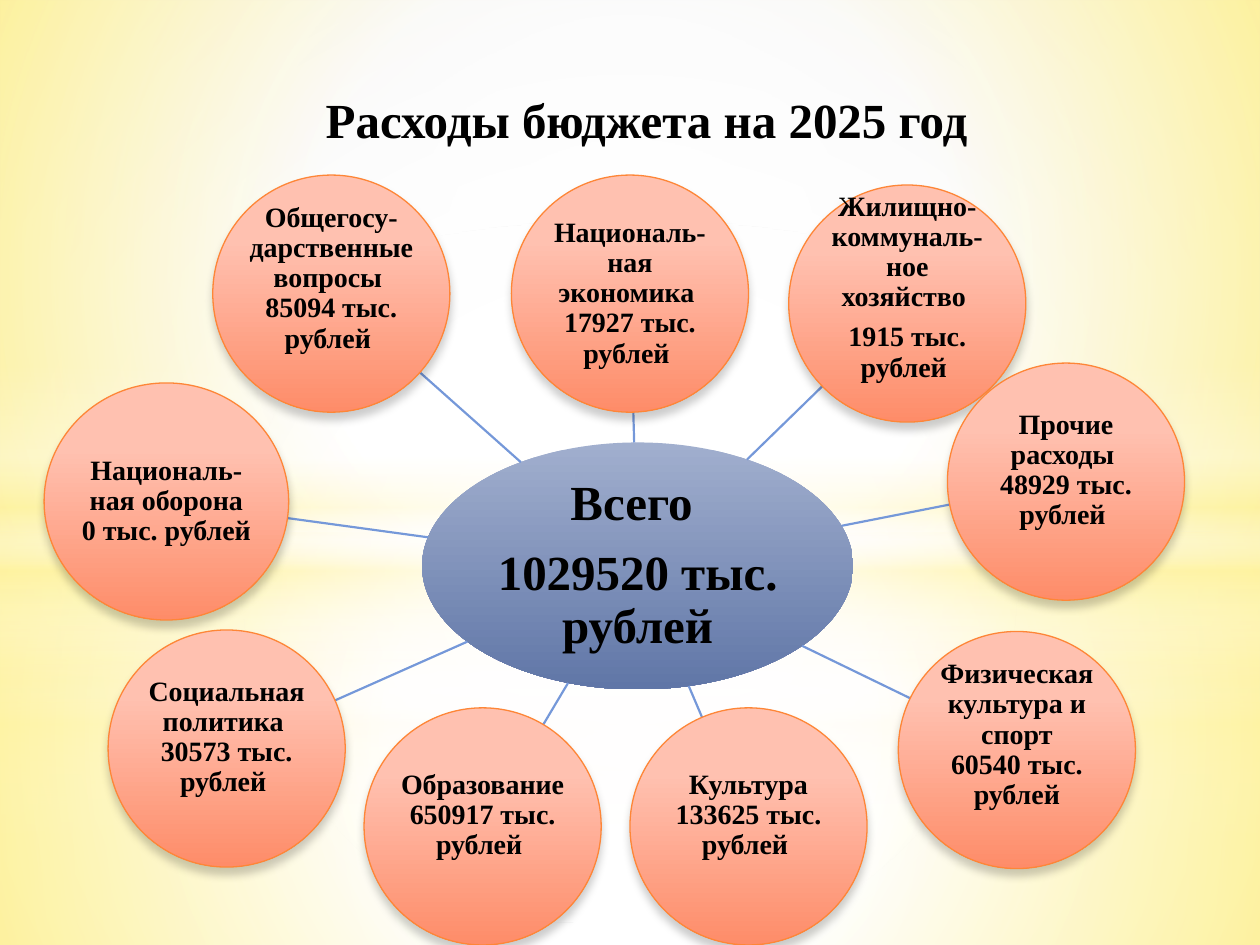
from dataclasses import dataclass
from math import hypot

from lxml.etree import SubElement
from pptx import Presentation
from pptx.dml.color import RGBColor
from pptx.enum.shapes import MSO_CONNECTOR, MSO_SHAPE
from pptx.enum.text import MSO_ANCHOR, PP_ALIGN
from pptx.oxml.ns import qn
from pptx.util import Cm, Pt


@dataclass(frozen=True)
class Theme:
    font: str = "Times New Roman"
    text: str = "000000"
    white: str = "FFFFFF"
    glow: str = "FFF39D"
    backdrop: str = "D1D1D1"
    hub: tuple = ("A1AFCE", "6076A7")
    circle: tuple = ("FFC1B0", "FE8C69")
    outline: str = "FE8637"
    spoke: str = "7598D9"
    large: int = 28
    small: int = 16


T = Theme()
WIDTH, HEIGHT = 25.4, 19.05
DIAMETER = 4.78
HUB = (8.51, 8.92, 8.69, 4.98)
CENTER = (50, 50, 50, 50)

# Expense circles: left, top, width, lift of the text, paragraphs
EXPENSES = [
    (4.29, 3.53, DIAMETER, 0.6, ["Общегосу-дарственные вопросы ", "85094 тыс. рублей "]),
    (0.89, 7.72, 4.93, 0, ["Националь-ная оборона", "0 тыс. рублей "]),
    (15.9, 3.73, DIAMETER, 0.64, ["Жилищно-коммуналь-ное хозяйство ", "1915 тыс. рублей "]),
    (19.1, 7.32, DIAMETER, 0.45, ["Прочие расходы ", "48929 тыс. рублей "]),
    (18.11, 12.73, DIAMETER, 0.6, ["Физическая культура и спорт", "60540 тыс. рублей"]),
    (12.7, 14.27, DIAMETER, 0.45, ["Культура", "133625 тыс. рублей "]),
    (7.34, 14.27, DIAMETER, 0.45, ["Образование", "650917 тыс. рублей "]),
    (2.18, 12.7, DIAMETER, 0.45, ["Социальная политика ", "30573 тыс. рублей "]),
    (10.31, 3.53, DIAMETER, 0, ["Националь-ная экономика ", "17927 тыс. рублей "]),
]
SPACED = "1915 тыс. рублей "


def add_color(parent, color, opacity=100):
    clr = SubElement(parent, qn("a:srgbClr"), val=color)
    if opacity < 100:
        SubElement(clr, qn("a:alpha"), val=str(opacity * 1000))


def set_gradient(fill, parent, stops, focus=None):
    """Vertical gradient, or a circular one around the focus rectangle."""
    fill.gradient()
    grad = parent.find(qn("a:gradFill"))
    grad.clear()
    grad.set("rotWithShape", "1")
    lst = SubElement(grad, qn("a:gsLst"))
    for pos, color, *opacity in stops:
        gs = SubElement(lst, qn("a:gs"), pos=str(pos * 1000))
        add_color(gs, color, *opacity)
    if focus:
        circle = SubElement(grad, qn("a:path"))
        circle.set("path", "circle")
        sides = {k: str(v * 1000) for k, v in zip("ltrb", focus)}
        SubElement(circle, qn("a:fillToRect"), **sides)
    else:
        SubElement(grad, qn("a:lin"), ang="5400000", scaled="0")


def add_panel(slide, kind, box, stops, focus=None):
    sp = slide.shapes.add_shape(kind, *map(Cm, box))
    sp.shadow.inherit = False
    sp.line.fill.background()
    set_gradient(sp.fill, sp._element.spPr, stops, focus)
    return sp


def put_text(sp, paragraphs, size=T.small, anchor=MSO_ANCHOR.MIDDLE,
             inset=0.03, lift=0, spacing=0.9, gap=0):
    tf = sp.text_frame
    tf.word_wrap = True
    tf.vertical_anchor = anchor
    tf.margin_left = tf.margin_right = tf.margin_top = Cm(inset)
    tf.margin_bottom = Cm(inset + lift)
    for i, text in enumerate(paragraphs):
        p = tf.add_paragraph() if i else tf.paragraphs[0]
        p.alignment = PP_ALIGN.CENTER
        p.line_spacing = spacing
        p.space_before = Pt(gap if i else 0)
        r = p.add_run()
        r.text = text
        r.font.name, r.font.size, r.font.bold = T.font, Pt(size), True
        r.font.color.rgb = RGBColor.from_string(T.text)


def add_shadow(sp):
    effects = sp._element.spPr.find(qn("a:effectLst"))
    shadow = SubElement(effects, qn("a:outerShdw"), blurRad=str(Pt(5)),
                        dist=str(Pt(4)), dir="5400000", rotWithShape="0")
    add_color(shadow, "000000", 20)


def edge_point(box, target):
    """Centre-to-target line meets the ellipse inscribed in box here."""
    x, y, w, h = box
    cx, cy = x + w / 2, y + h / 2
    dx, dy = target[0] - cx, target[1] - cy
    t = 1 / hypot(dx / (w / 2), dy / (h / 2))
    return cx + dx * t, cy + dy * t


def add_spoke(slide, box):
    hub_mid, mid = ((x + w / 2, y + h / 2) for x, y, w, h in (HUB, box))
    ends = edge_point(HUB, mid) + edge_point(box, hub_mid)
    s = slide.shapes.add_connector(MSO_CONNECTOR.STRAIGHT, *map(Cm, ends))
    s.line.color.rgb = RGBColor.from_string(T.spoke)
    s.line.width = Pt(1.25)
    SubElement(s._element.spPr, qn("a:effectLst"))


def add_expense(slide, x, y, w, lift, paragraphs):
    box = (x, y, w, DIAMETER)
    add_spoke(slide, box)
    light, dark = T.circle
    sp = add_panel(slide, MSO_SHAPE.OVAL, box, [(28, light), (100, dark)])
    sp.line.color.rgb = RGBColor.from_string(T.outline)
    sp.line.width = Pt(0.75)
    add_shadow(sp)
    put_text(sp, paragraphs, lift=lift, gap=5.6 if SPACED in paragraphs else 0)


def add_backdrop(slide):
    set_gradient(slide.background.fill, slide._element.find(".//" + qn("p:bgPr")),
                 [(0, T.white), (42, T.white), (100, T.backdrop)], (24, 44, 24, 12))
    band = [(0, T.white, 0), (29, T.white, 30), (45, T.glow, 40),
            (55, T.white, 26), (65, T.glow, 60), (100, T.white, 0)]
    # Two layers: horizon, band top, extra opacity, reach of the white oval
    for horizon, band_top, extra, reach in ((14.17, 10.46, 0, 56), (10.74, 7.37, 1, 54)):
        for top, height, outer, middle, pos in (
                (horizon, HEIGHT - horizon, 91, 76, 37), (0, horizon, 89, 62, 48)):
            stops = [(0, T.white, outer + extra), (pos, T.white, middle + extra),
                     (100, T.glow, 79 + extra)]
            add_panel(slide, MSO_SHAPE.RECTANGLE, (0, top, WIDTH, height), stops, CENTER)
        add_panel(slide, MSO_SHAPE.RECTANGLE, (0, band_top, WIDTH, 6.35), band)
        add_panel(slide, MSO_SHAPE.OVAL, (0, 4.45, WIDTH, 14.17),
                  [(0, T.white), (reach, T.white, 0)], CENTER)


def main():
    prs = Presentation()
    prs.slide_width, prs.slide_height = Cm(WIDTH), Cm(HEIGHT)
    slide = prs.slides.add_slide(prs.slide_layouts[6])
    add_backdrop(slide)

    # Total in the middle
    top, bottom = T.hub
    hub = add_panel(slide, MSO_SHAPE.OVAL, HUB, [(0, top), (100, bottom)])
    put_text(hub, ["Всего ", "1029520 тыс. рублей"], size=T.large, inset=0.05, gap=9.8)

    # Expenses around it
    for expense in EXPENSES:
        add_expense(slide, *expense)

    # Title
    title = slide.shapes.add_textbox(Cm(0.69), Cm(1.93), Cm(24.69), Cm(1.19))
    put_text(title, ["Расходы бюджета на 2025 год"], size=T.large,
             anchor=MSO_ANCHOR.BOTTOM, inset=0.13, spacing=1.0)
    prs.save("out.pptx")


if __name__ == "__main__":
    main()
